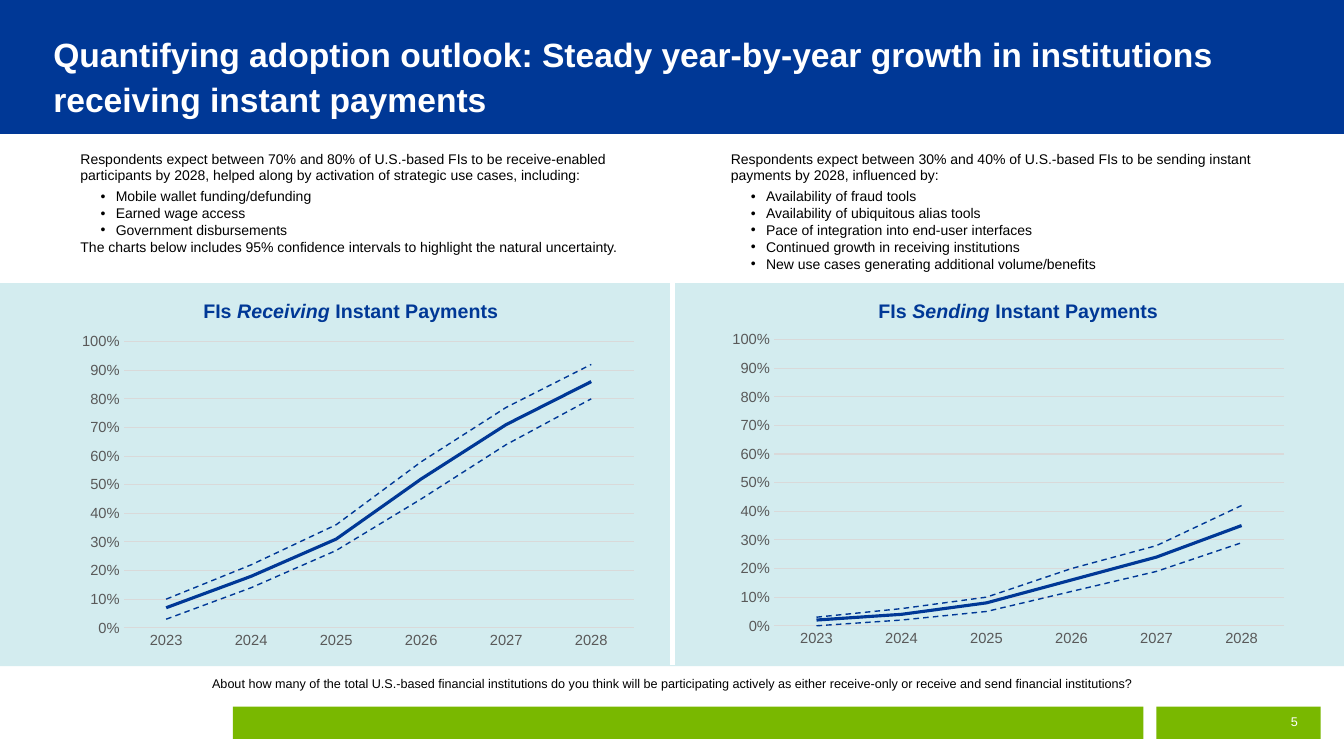
from pptx import Presentation, util as u
from pptx.chart.data import CategoryChartData
from pptx.dml.color import RGBColor
from pptx.enum import chart as ch, dml, shapes, text
from pptx.oxml.ns import qn
from lxml import etree

# Content
NAVY, GREEN, AQUA, GREY, RULE = "003896", "79B800", "ABDBE2", "595959", "D9D9D9"
WHITE, BLACK, FONT = "FFFFFF", "000000", "Arial"
TITLE = ("Quantifying adoption outlook:\u00a0Steady year-by-year growth in "
         "institutions receiving instant payments")
ASK = ("About how many of the total U.S.-based financial institutions do you think will be "
       "participating actively as either receive-only or receive and send financial institutions?")
YEARS = ["2023", "2024", "2025", "2026", "2027", "2028"]
PANELS = [
    dict(left=0.7, wide=5.7, head=5.56, top=3.24, deep=1.15, verb="Receiving",
         lead="Respondents expect between 70% and 80% of U.S.-based FIs to be receive-enabled "
              "participants by 2028, helped along by activation of strategic use cases, including:",
         points=["Mobile wallet funding/defunding", "Earned wage access",
                 "Government disbursements"],
         tail=["The charts below includes 95% confidence intervals to highlight "
               "the natural uncertainty."],
         rows=[(0.1, 0.22, 0.36, 0.58, 0.77, 0.92),
               (0.07, 0.18, 0.31, 0.52, 0.71, 0.86),
               (0.03, 0.14, 0.27, 0.45, 0.64, 0.8)]),
    dict(left=7.15, wide=5.9, head=5.9, top=3.22, deep=1.32, verb="Sending",
         lead="Respondents expect between 30% and 40% of U.S.-based FIs to be sending instant "
              "payments by 2028, influenced by:",
         points=["Availability of fraud tools", "Availability of ubiquitous alias tools",
                 "Pace of integration into end-user interfaces",
                 "Continued growth in receiving institutions",
                 "New use cases generating additional volume/benefits"],
         tail=[],
         rows=[(0.03, 0.06, 0.1, 0.2, 0.28, 0.42),
               (0.02, 0.04, 0.08, 0.16, 0.24, 0.35),
               (0, 0.02, 0.05, 0.12, 0.19, 0.29)]),
]

deck = Presentation()
deck.slide_width, deck.slide_height = u.Inches(13.33), u.Inches(7.5)
slide = deck.slides.add_slide(deck.slide_layouts[6])


def tint(code):
    return RGBColor.from_string(code)


def inch(*sizes):
    return [u.Inches(size) for size in sizes]


def style(font, size, color, bold=False):
    font.name, font.size, font.bold = FONT, u.Pt(size), bold
    font.color.rgb = tint(color)


def stroke(line, color, width, dash=None):
    line.color.rgb, line.width = tint(color), u.Pt(width)
    if dash:
        line.dash_style = dash


def band(left, top, wide, high, color, alpha=100):
    box = slide.shapes.add_shape(shapes.MSO_SHAPE.RECTANGLE, *inch(left, top, wide, high))
    box.shadow.inherit = False
    box.fill.solid()
    box.fill.fore_color.rgb = tint(color)
    box.line.fill.background()
    if alpha < 100:
        paint = box.fill._xPr.find(qn("a:solidFill"))[0]
        etree.SubElement(paint, qn("a:alpha"), val=str(alpha * 1000))


def write(spot, paras, size=10, color=BLACK, bold=False, align="LEFT", lines=None,
          after=0, dots=(), anchor="TOP"):
    """Each paragraph is a list of runs; a run is (words, italic)."""
    frame = slide.shapes.add_textbox(*inch(*spot)).text_frame
    frame.word_wrap = True
    frame.vertical_anchor = text.MSO_ANCHOR[anchor]
    for i, runs in enumerate(paras):
        para = frame.paragraphs[0] if i == 0 else frame.add_paragraph()
        para.alignment = text.PP_ALIGN[align]
        if lines:
            para.line_spacing = u.Pt(lines)
        if i == 0 and after:
            para.space_after = u.Pt(after)
        if i in dots:
            props = para._p.get_or_add_pPr()
            props.set("marL", str(u.Inches(0.35)))
            props.set("indent", str(u.Inches(-0.15)))
            etree.SubElement(props, qn("a:buFont"), typeface=FONT)
            etree.SubElement(props, qn("a:buChar"), char="•")
        for words, slant in runs:
            run = para.add_run()
            run.text = words
            style(run.font, size, color, bold)
            run.font.italic = slant


def graph(left, top, rows):
    data = CategoryChartData(number_format="0%")
    data.categories = YEARS
    for n, row in enumerate(rows, 1):
        data.add_series(f"Series {n}", row)
    plot = slide.shapes.add_chart(ch.XL_CHART_TYPE.LINE, *inch(left, top, 5.7, 3.26), data).chart
    plot.has_legend = plot.has_title = False
    style(plot.font, 10.5, BLACK)
    plot.plots[0].vary_by_categories = False
    years, share = plot.category_axis, plot.value_axis
    for axis in (years, share):
        axis.major_tick_mark = axis.minor_tick_mark = ch.XL_TICK_MARK.NONE
        style(axis.tick_labels.font, 10.5, GREY)
    stroke(years.format.line, RULE, 0.75)
    share.format.line.fill.background()
    share.minimum_scale, share.maximum_scale, share.major_unit = 0, 1, 0.1
    share.tick_labels.number_format = "0%"
    share.tick_labels.number_format_is_linked = False
    stroke(share.major_gridlines.format.line, RULE, 0.75)
    for n, trend in enumerate(plot.plots[0].series):
        trend.smooth = False
        trend.marker.style = ch.XL_MARKER_STYLE.NONE
        if n == 1:
            stroke(trend.format.line, NAVY, 2.25)
        else:
            stroke(trend.format.line, NAVY, 1, dml.MSO_LINE.DASH)


# Bands, title and footer
band(0, 0, 13.33, 1.33, NAVY)
band(2.31, 7.01, 9.03, 0.32, GREEN)
band(11.47, 7.01, 1.63, 0.32, GREEN)
band(0, 2.81, 13.33, 3.8, AQUA, alpha=52)
write((0.43, 0.24, 12.62, 0.9), [[(TITLE, False)]], size=24, color=WHITE, bold=True, lines=32)
write((0.96, 6.66, 11.41, 0.25), [[(ASK, False)]], size=9, align="CENTER")
write((11.47, 6.96, 1.5, 0.4), [[("5", False)]], size=9, color=WHITE, align="RIGHT",
      anchor="MIDDLE")

# Divider between the two panels
rule = slide.shapes.add_connector(shapes.MSO_CONNECTOR.STRAIGHT, *inch(6.67, 2.67, 6.67, 6.6))
stroke(rule.line, WHITE, 3)
etree.SubElement(rule._element.spPr, qn("a:effectLst"))

# Panels: notes, heading, chart
for p in PANELS:
    notes = [p["lead"], *p["points"], *p["tail"]]
    write((p["left"], 1.44, p["wide"], p["deep"]), [[(note, False)] for note in notes],
          after=3, dots=range(1, len(p["points"]) + 1))
    write((p["left"], 2.92, p["head"], 0.34),
          [[("FIs ", False), (p["verb"], True), (" Instant Payments", False)]],
          size=14, color=NAVY, bold=True, align="CENTER")
    graph(p["left"], p["top"], p["rows"])

deck.save("out.pptx")
